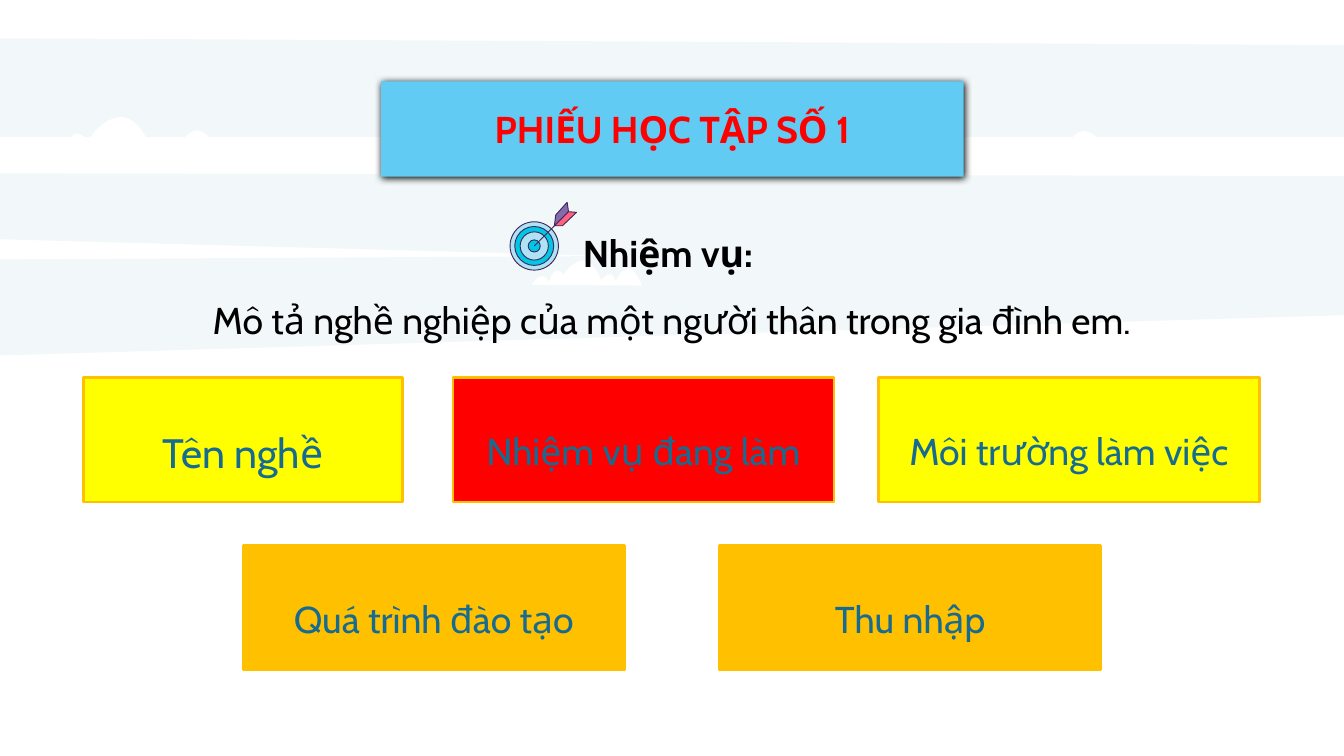
from dataclasses import dataclass

from lxml import etree
from pptx import Presentation
from pptx import util as u
from pptx.dml.color import RGBColor
from pptx.enum import shapes, text
from pptx.oxml.ns import qn

COLS, ROWS = 20, 11.25


@dataclass(frozen=True)
class Theme:
    font: str = "Cabin"
    size: int = 40
    large: int = 44
    white: str = "FFFFFF"
    black: str = "000000"
    band: str = "B5D6E2"
    banner: str = "61CBF4"
    red: str = "FF0000"
    yellow: str = "FFFF00"
    amber: str = "FFC000"
    label: str = "176B91"
    outline: str = "3E285A"
    pale: str = "AEE2F4"
    cyan: str = "00C7E6"
    purple: str = "866AAC"
    pink: str = "FF6180"


T = Theme()

BANDS = [
    [(0, 0.57), (0, 2.04), (20, 2.04), (20, 0.67)],
    [(0, 2.58), (0, 3.56), (9.11, 3.81), (0, 3.86), (0, 5.29), (20, 4.69), (20, 2.62)],
]
CLOUDS = [
    [(0.52, 2.34), (0.77, 2.13), (0.94, 2.28), (1.14, 1.99), (1.31, 2.1), (1.81, 1.74),
     (2.27, 2.24), (2.48, 2.08), (2.62, 2.26), (2.94, 1.94), (3.28, 2.36)],
    [(7.92, 4.24), (8.07, 4.11), (8.17, 4.2), (8.29, 4.03), (8.39, 4.09), (8.68, 3.88),
     (8.95, 4.18), (9.08, 4.08), (9.16, 4.19), (9.35, 4), (9.55, 4.25)],
    [(15.24, 2.45), (15.5, 2.19), (15.79, 2.35), (16.13, 1.95), (16.49, 2.31),
     (16.78, 2.12), (16.98, 2.44)],
]
CARDS = [
    ("Tên nghề", 1.24, 5.62, 4.75, T.yellow, T.large),
    ("Nhiệm vụ đang làm", 6.74, 5.62, 5.67, T.red, T.size),
    ("Môi trường làm việc", 13.07, 5.62, 5.67, T.yellow, T.size),
    ("Quá trình đào tạo", 3.62, 8.12, 5.67, T.amber, T.size),
    ("Thu nhập", 10.71, 8.12, 5.67, T.amber, T.size),
]
CARD_ROWS = 1.85


def grid(*lengths):
    return [u.Inches(n) for n in lengths]


def paint(sp, fill, line=None, width=1):
    sp.fill.solid()
    sp.fill.fore_color.rgb = RGBColor.from_string(fill)
    if line:
        sp.line.color.rgb = RGBColor.from_string(line)
        sp.line.width = u.Pt(width)
    else:
        sp.line.fill.background()


def write(tf, lines, color, size=T.size, spacing=None):
    tf.word_wrap = True
    tf.text = "\n".join(words for words, bold in lines)
    for p, (words, bold) in zip(tf.paragraphs, lines):
        p.alignment = text.PP_ALIGN.CENTER
        p.line_spacing = spacing
        for r in p.runs:
            r.font.name = T.font
            r.font.size = u.Pt(size)
            r.font.bold = bold
            r.font.color.rgb = RGBColor.from_string(color)


def add_polygon(s, points, fill, line=None):
    corners = [grid(x, y) for x, y in points]
    builder = s.shapes.build_freeform(*corners[0])
    builder.add_line_segments(corners[1:])
    sp = builder.convert_to_shape()
    sp.shadow.inherit = False
    paint(sp, fill, line)
    return sp


def add_band(s, points):
    sp = add_polygon(s, points, T.band)
    color = sp._element.spPr.find(qn("a:solidFill"))[0]
    etree.SubElement(color, qn("a:alpha"), val="17000")


def slope(peak, valley, steps=8):
    (px, py), (vx, vy) = peak, valley
    cx = px + 0.6 * (vx - px)
    curve = []
    for i in range(steps + 1):
        t = i / steps
        a, b, c = (1 - t) ** 3, 3 * t * (1 - t) ** 2, 3 * t * t * (1 - t) + t ** 3
        curve.append((a * px + b * cx + c * vx, (a + b) * py + c * vy))
    return curve


def add_cloud(s, knots):
    points = []
    for left, peak, right in zip(knots[::2], knots[1::2], knots[2::2]):
        points += slope(peak, left)[::-1] + slope(peak, right)[1:]
    add_polygon(s, points, T.white)


def add_banner(s, words):
    sp = s.shapes.title
    s.shapes._spTree.append(sp._element)
    sp.left, sp.top, sp.width, sp.height = grid(5.67, 1.21, 8.67, 1.42)
    geometry = etree.SubElement(sp._element.spPr, qn("a:prstGeom"), prst="roundRect")
    etree.SubElement(geometry, qn("a:avLst"))
    paint(sp, T.banner)
    effects = etree.SubElement(sp._element.spPr, qn("a:effectLst"))
    shadow = etree.SubElement(effects, qn("a:outerShdw"), blurRad=str(u.Pt(8.5)),
                              dist=str(u.Pt(1)), dir="5400000", algn="ctr", rotWithShape="0")
    etree.SubElement(shadow, qn("a:srgbClr"), val=T.black)
    tf = sp.text_frame
    tf.auto_size = text.MSO_AUTO_SIZE.NONE
    tf.vertical_anchor = text.MSO_ANCHOR.MIDDLE
    write(tf, [(words, True)], T.red)


def add_card(s, words, left, top, width, fill, size):
    sp = s.shapes.add_shape(shapes.MSO_SHAPE.RECTANGLE, *grid(left, top, width, CARD_ROWS))
    sp.shadow.inherit = False
    paint(sp, fill, T.amber, 3)
    sp.text_frame.vertical_anchor = text.MSO_ANCHOR.MIDDLE
    write(sp.text_frame, [(words, False)], T.label, size, 1.5)


def add_task(s):
    tf = s.shapes.add_textbox(*grid(1.25, 3.04, 17.5, 2)).text_frame
    write(tf, [("Nhiệm vụ: ", True),
               ("Mô tả nghề nghiệp của một người thân trong gia đình em.", False)],
          T.black, spacing=1.5)


def add_target(s, x, y):
    for radius, fill in [(0.36, T.pale), (0.29, T.cyan), (0.21, T.pale), (0.09, T.cyan)]:
        box = grid(x - radius, y - radius, 2 * radius, 2 * radius)
        ring = s.shapes.add_shape(shapes.MSO_SHAPE.OVAL, *box)
        ring.shadow.inherit = False
        paint(ring, fill, T.outline)
    shaft = s.shapes.add_connector(shapes.MSO_CONNECTOR.STRAIGHT,
                                   *grid(x, y, x + 0.51, y - 0.51))
    shaft.line.color.rgb = RGBColor.from_string(T.outline)
    shaft.line.width = u.Pt(1)
    etree.SubElement(shaft._element.spPr, qn("a:effectLst"))
    add_polygon(s, [(8.44, 3.01), (8.27, 3.2), (8.25, 3.36), (8.46, 3.15)],
                T.purple, T.outline)
    add_polygon(s, [(8.46, 3.15), (8.25, 3.36), (8.37, 3.36), (8.58, 3.16)],
                T.pink, T.outline)


def main():
    prs = Presentation()
    prs.slide_width, prs.slide_height = grid(COLS, ROWS)
    s = prs.slides.add_slide(prs.slide_layouts[5])
    for points in BANDS:
        add_band(s, points)
    for knots in CLOUDS:
        add_cloud(s, knots)
    add_banner(s, "PHIẾU HỌC TẬP SỐ 1")
    for card in CARDS:
        add_card(s, *card)
    add_task(s)
    add_target(s, 7.95, 3.66)
    prs.save("out.pptx")


if __name__ == "__main__":
    main()
